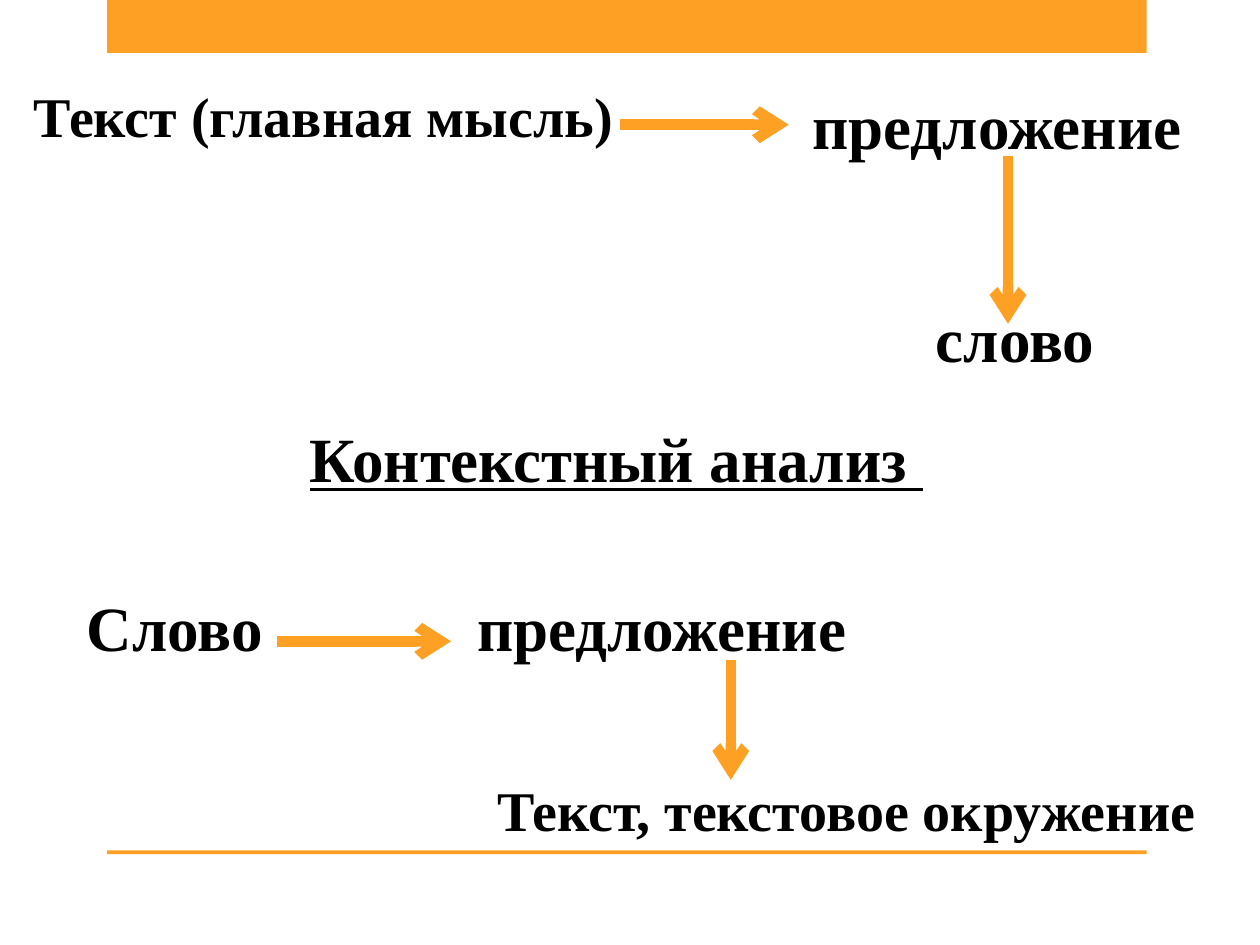
from pptx import Presentation
from pptx.dml.color import RGBColor
from pptx.enum.shapes import MSO_CONNECTOR as Connector, MSO_SHAPE as Shape
from pptx.enum.text import MSO_AUTO_SIZE as AutoSize
from pptx.oxml.ns import qn
from pptx.util import Inches, Pt
from lxml.etree import SubElement

ORANGE = "FDA023"
BLACK = "000000"
FONT = "Times New Roman"


def color(value):
    return RGBColor.from_string(value)


def add_bar(page, left, top, width, height):
    bar = page.shapes.add_shape(
        Shape.RECTANGLE, Inches(left), Inches(top), Inches(width), Inches(height))
    bar.shadow.inherit = False
    bar.fill.solid()
    bar.fill.fore_color.rgb = color(ORANGE)
    bar.line.fill.background()


def add_label(page, text, left, top, width, size=36, underline=False, wrap=False):
    height = 0.71 if size == 36 else 0.64
    box = page.shapes.add_textbox(
        Inches(left), Inches(top), Inches(width), Inches(height))
    frame = box.text_frame
    frame.word_wrap = wrap
    frame.auto_size = AutoSize.SHAPE_TO_FIT_TEXT
    para = frame.paragraphs[0]
    para.text = text
    font = para.font
    font.name = FONT
    font.size = Pt(size)
    font.bold = True
    font.underline = underline
    font.color.rgb = color(BLACK)


def add_arrow(page, left, top, across=0, down=0):
    arrow = page.shapes.add_connector(
        Connector.STRAIGHT, Inches(left), Inches(top),
        Inches(left + across), Inches(top + down))
    arrow.line.color.rgb = color(ORANGE)
    arrow.line.width = Pt(6)
    SubElement(arrow.line._get_or_add_ln(), qn("a:tailEnd"), type="arrow")
    SubElement(arrow._element.spPr, qn("a:effectLst"))


def add_frame(page, left, top, width, height):
    add_bar(page, left, top, width, 0.42)
    add_bar(page, left, top + height - 0.03, width, 0.03)


def add_text_to_word(page, left, top):
    add_label(page, "Текст (главная мысль)", left, top, 5.28, size=32, wrap=True)
    add_arrow(page, left + 4.75, top + 0.39, across=1.34)
    add_label(page, "слово", left + 7.16, top + 1.73, 1.47)
    add_label(page, "предложение", left + 6.18, top + 0.04, 3.29)
    add_arrow(page, left + 7.83, top + 0.64, down=1.33)


def add_word_to_text(page, left, top):
    add_label(page, "Слово", left, top, 1.61)
    add_arrow(page, left + 1.61, top + 0.47, across=1.38)
    add_label(page, "предложение", left + 3.1, top, 3.29)
    add_arrow(page, left + 5.21, top + 0.62, down=0.95)
    add_label(page, "Текст, текстовое окружение", left + 3.26, top + 1.49, 5.8, size=32)


def main():
    deck = Presentation()
    deck.slide_width = Inches(10)
    deck.slide_height = Inches(7.5)
    page = deck.slides.add_slide(deck.slide_layouts[6])
    add_frame(page, 0.85, 0, 8.25, 6.78)
    add_text_to_word(page, 0.17, 0.6)
    add_label(page, "Контекстный анализ ", 2.36, 3.28, 5.12, underline=True)
    add_word_to_text(page, 0.59, 4.62)
    deck.save("out.pptx")


if __name__ == "__main__":
    main()
